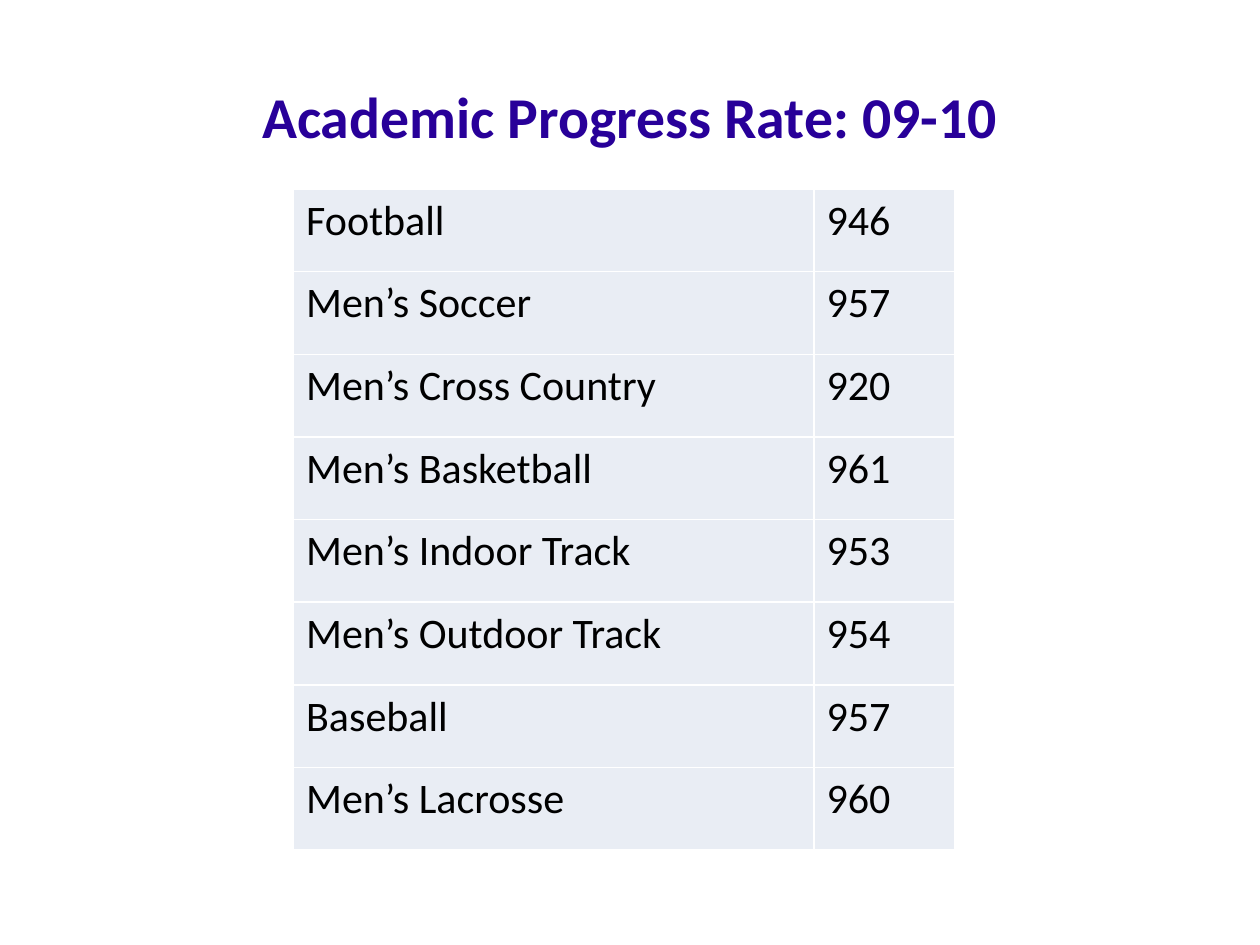
from dataclasses import dataclass
from typing import NamedTuple

from lxml.etree import SubElement
from pptx import Presentation
from pptx.dml.color import RGBColor as RGB
from pptx.enum.text import MSO_ANCHOR as Anchor, PP_ALIGN as Align
from pptx.oxml.ns import qn
from pptx.util import Inches, Pt


@dataclass(frozen=True)
class Theme:
    font: str = "Calibri"
    title_color: RGB = RGB(0x28, 0x00, 0x99)
    text_color: RGB = RGB(0, 0, 0)
    cell_fill: RGB = RGB(0xE9, 0xED, 0xF4)
    border_color: RGB = RGB(0xFF, 0xFF, 0xFF)
    title_size: Pt = Pt(33)
    cell_size: Pt = Pt(24)
    border_width: Pt = Pt(1)


class TeamRate(NamedTuple):
    team: str
    rate: int


THEME = Theme()
TEAM_RATES = [
    TeamRate("Football", 946),
    TeamRate("Men’s Soccer", 957),
    TeamRate("Men’s Cross Country", 920),
    TeamRate("Men’s Basketball", 961),
    TeamRate("Men’s Indoor Track", 953),
    TeamRate("Men’s Outdoor Track", 954),
    TeamRate("Baseball", 957),
    TeamRate("Men’s Lacrosse", 960),
]
COLUMN_WIDTHS = (4.13, 1.12)
TABLE_HEIGHT = 5.25


def style_paragraph(paragraph, size: Pt, color: RGB, bold: bool = False) -> None:
    font = paragraph.font
    font.name, font.size, font.bold = THEME.font, size, bold
    font.color.rgb = color


def add_borders(cell) -> None:
    """Line all four sides; must run before the cell gets its fill."""
    properties = cell._tc.get_or_add_tcPr()
    for side in ("lnL", "lnR", "lnT", "lnB"):
        line = SubElement(properties, qn(f"a:{side}"), w=str(THEME.border_width))
        fill = SubElement(line, qn("a:solidFill"))
        SubElement(fill, qn("a:srgbClr"), val=str(THEME.border_color))


def fill_cell(cell, text: str) -> None:
    cell.text = text
    style_paragraph(cell.text_frame.paragraphs[0], THEME.cell_size, THEME.text_color)
    add_borders(cell)
    cell.fill.solid()
    cell.fill.fore_color.rgb = THEME.cell_fill


def add_title(slide, text: str) -> None:
    title = slide.shapes.title
    title.left, title.top = Inches(0.5), Inches(0.34)
    title.width, title.height = Inches(9), Inches(1.16)
    frame = title.text_frame
    frame.margin_left = frame.margin_right = frame.margin_top = frame.margin_bottom = 0
    frame.vertical_anchor = Anchor.MIDDLE
    frame.text = text
    heading = frame.paragraphs[0]
    heading.alignment = Align.CENTER
    style_paragraph(heading, THEME.title_size, THEME.title_color, bold=True)


def add_rate_table(slide, team_rates: list[TeamRate]) -> None:
    table = slide.shapes.add_table(
        len(team_rates), len(COLUMN_WIDTHS), Inches(2.33), Inches(1.5),
        Inches(sum(COLUMN_WIDTHS)), Inches(TABLE_HEIGHT),
    ).table
    table.first_row = table.horz_banding = False
    for column, width in zip(table.columns, COLUMN_WIDTHS):
        column.width = Inches(width)
    for row, team_rate in zip(table.rows, team_rates):
        for cell, value in zip(row.cells, team_rate):
            fill_cell(cell, str(value))


def main() -> None:
    deck = Presentation()
    deck.slide_width, deck.slide_height = Inches(10), Inches(7.5)
    slide = deck.slides.add_slide(deck.slide_layouts[5])  # Title Only
    add_title(slide, "Academic Progress Rate: 09-10")
    add_rate_table(slide, TEAM_RATES)
    deck.save("out.pptx")


if __name__ == "__main__":
    main()
